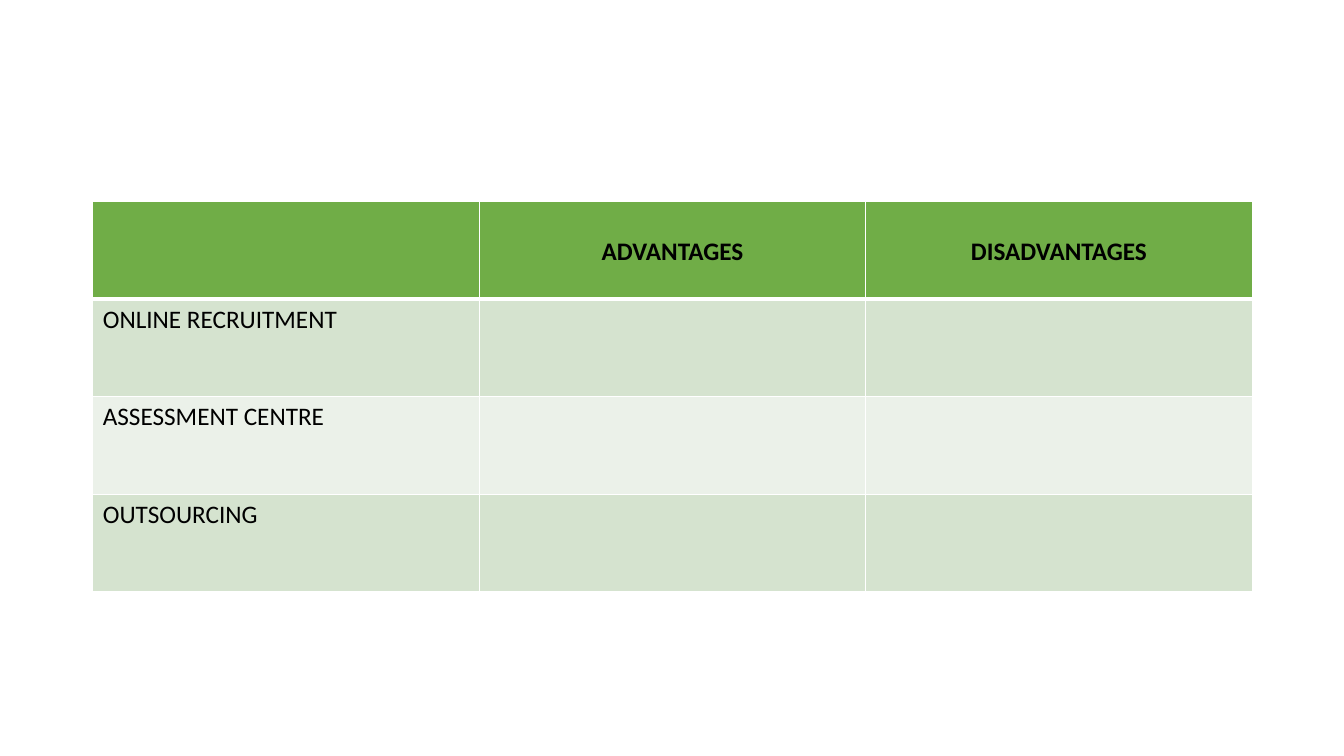
import pptx
import pptx.dml.color
import pptx.enum.text
import pptx.oxml
import pptx.oxml.ns
import pptx.util
from pptx.util import Inches

COLORS = {
    "header": "70AD47",
    "band_dark": "D5E3CF",
    "band_light": "EBF1E9",
    "border": "FFFFFF",
    "text": "000000",
}
ROWS = [
    ["", "ADVANTAGES", "DISADVANTAGES"],
    ["ONLINE RECRUITMENT", "", ""],
    ["ASSESSMENT CENTRE", "", ""],
    ["OUTSOURCING", "", ""],
]


def rgb(name):
    return pptx.dml.color.RGBColor.from_string(COLORS[name])


def set_borders(cell, top, bottom):
    """Draw all four cell borders; widths are in points."""
    properties = cell._tc.get_or_add_tcPr()
    for side, width in (("L", 1), ("R", 1), ("T", top), ("B", bottom)):
        properties.append(pptx.oxml.parse_xml(
            f'<a:ln{side} {pptx.oxml.ns.nsdecls("a")} w="{pptx.util.Pt(width)}">'
            f'<a:solidFill><a:srgbClr val="{COLORS["border"]}"/></a:solidFill>'
            f'</a:ln{side}>'))


def format_cell(cell, text, row_index):
    is_header = row_index == 0
    set_borders(cell, top=3 if row_index == 1 else 1, bottom=3 if is_header else 1)
    cell.fill.solid()
    if is_header:
        cell.fill.fore_color.rgb = rgb("header")
        cell.margin_top = Inches(0.35)
    else:
        cell.fill.fore_color.rgb = rgb("band_dark" if row_index % 2 else "band_light")

    cell.text = text
    paragraph = cell.text_frame.paragraphs[0]
    if is_header:
        paragraph.alignment = pptx.enum.text.PP_ALIGN.CENTER
    paragraph.font.name = "Calibri"
    paragraph.font.size = pptx.util.Pt(18)
    paragraph.font.bold = is_header
    paragraph.font.color.rgb = rgb("text")


def add_comparison_table(slide):
    shape = slide.shapes.add_table(
        len(ROWS), len(ROWS[0]),
        Inches(0.92), Inches(2), Inches(11.5), Inches(3.87))
    for row_index, row in enumerate(ROWS):
        for column_index, text in enumerate(row):
            format_cell(shape.table.cell(row_index, column_index), text, row_index)


def main():
    presentation = pptx.Presentation()
    presentation.slide_width = Inches(13.33)
    presentation.slide_height = Inches(7.5)

    # Blank layout: the slide has no title
    slide = presentation.slides.add_slide(presentation.slide_layouts[6])
    add_comparison_table(slide)

    presentation.save("out.pptx")


if __name__ == "__main__":
    main()
